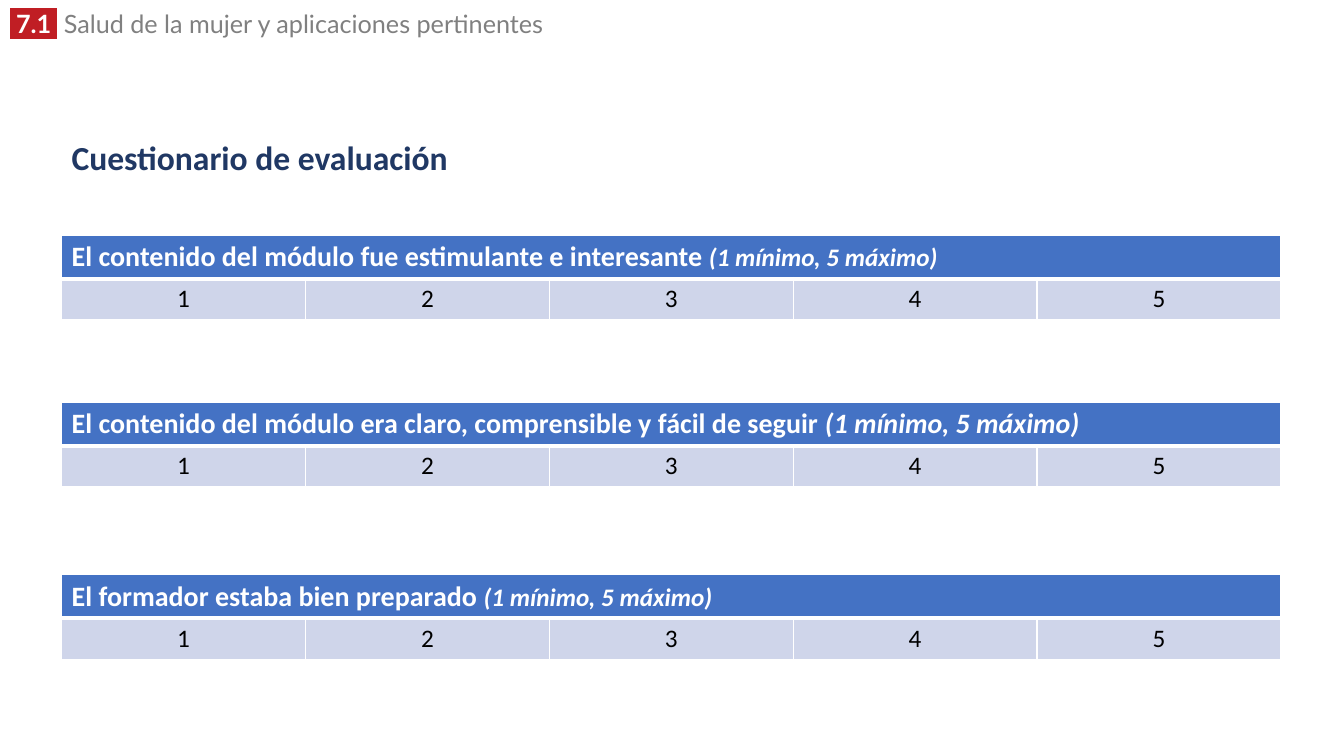
from dataclasses import dataclass

from lxml.etree import SubElement
from pptx import Presentation
from pptx.dml.color import RGBColor
from pptx.enum.text import MSO_ANCHOR, MSO_AUTO_SIZE, PP_ALIGN
from pptx.oxml.ns import qn
from pptx.util import Pt


@dataclass(frozen=True)
class Theme:
    font: str = "Calibri"
    tag_font: str = "Lato"
    white: str = "FFFFFF"
    black: str = "000000"
    red: str = "C01E24"
    gray: str = "808080"
    navy: str = "203864"
    blue: str = "4472C4"
    pale: str = "CFD5EA"
    title: int = 24
    head: int = 20
    body: int = 18
    thin: int = 1
    thick: int = 3


THEME = Theme()
COUNT = 5
ROW = 29.2
HINT = "(1 mínimo, 5 máximo)"
ITEMS = [
    (167.8, "El contenido del módulo fue estimulante e interesante ", THEME.body),
    (287.3, "El contenido del módulo era claro, comprensible y fácil de seguir ", THEME.head),
    (410.4, "El formador estaba bien preparado ", THEME.body),
]


def style(font, name=None, size=None, color=None, bold=None):
    if name:
        font.name = name
    if size:
        font.size = Pt(size)
    if color:
        font.color.rgb = RGBColor.from_string(color)
    if bold is not None:
        font.bold = bold


def add_run(para, text, **look):
    run = para.add_run()
    run.text = text
    style(run.font, **look)
    return run


def add_color(node, color):
    SubElement(node, qn("a:srgbClr"), val=color)


def add_text(slide, left, top, width, height):
    box = slide.shapes.add_textbox(Pt(left), Pt(top), Pt(width), Pt(height))
    box.text_frame.word_wrap = True
    return box.text_frame


def add_header(slide, left, top, width, height):
    frame = add_text(slide, left, top, width, height)
    frame.auto_size = MSO_AUTO_SIZE.SHAPE_TO_FIT_TEXT
    para = frame.paragraphs[0]
    para.line_spacing = 0.8
    style(para.font, THEME.tag_font, THEME.body)
    tag = add_run(para, " 7.1 ", color=THEME.white, bold=True)
    mark = SubElement(tag.font.fill._xPr, qn("a:highlight"))
    add_color(mark, THEME.red)
    add_run(para, " Salud de la mujer y aplicaciones pertinentes", color=THEME.gray)


def add_title(slide, left, top, width, height):
    frame = add_text(slide, left, top, width, height)
    frame.vertical_anchor = MSO_ANCHOR.MIDDLE
    para = frame.paragraphs[0]
    para.text = "Cuestionario de evaluación"
    para.line_spacing = 0.9
    style(para.font, THEME.font, THEME.title, THEME.navy, True)


def paint(cell, color, top, bottom):
    props = cell._tc.get_or_add_tcPr()
    sides = {"lnL": THEME.thin, "lnR": THEME.thin, "lnT": top, "lnB": bottom}
    for side, width in sides.items():
        line = SubElement(props, qn(f"a:{side}"), w=str(Pt(width)))
        add_color(SubElement(line, qn("a:solidFill")), THEME.white)
    cell.fill.solid()
    cell.fill.fore_color.rgb = RGBColor.from_string(color)


def add_scale(slide, left, top, width, query, size):
    frame = slide.shapes.add_table(2, COUNT, Pt(left), Pt(top), Pt(width), Pt(2 * ROW))
    table = frame.table
    for col in table.columns:
        col.width = Pt(width / COUNT)
    for i in range(COUNT):
        paint(table.cell(0, i), THEME.blue, THEME.thin, THEME.thick)
        cell = table.cell(1, i)
        paint(cell, THEME.pale, THEME.thick, THEME.thin)
        para = cell.text_frame.paragraphs[0]
        para.text = str(i + 1)
        para.alignment = PP_ALIGN.CENTER
        style(para.font, THEME.font, THEME.body, THEME.black, False)
    head = table.cell(0, 0)
    head.merge(table.cell(0, COUNT - 1))
    para = head.text_frame.paragraphs[0]
    style(para.font, THEME.font, color=THEME.white, bold=True)
    add_run(para, query, size=THEME.head)
    add_run(para, HINT, size=size).font.italic = True


def main():
    deck = Presentation()
    deck.slide_width, deck.slide_height = Pt(960), Pt(540)
    slide = deck.slides.add_slide(deck.slide_layouts[6])
    left, width = 44, 871
    add_header(slide, 0, 6.5, 453, 25)
    add_title(slide, left, 85, width, 57.6)
    for top, query, size in ITEMS:
        add_scale(slide, left, top, width, query, size)
    deck.save("out.pptx")


if __name__ == "__main__":
    main()
